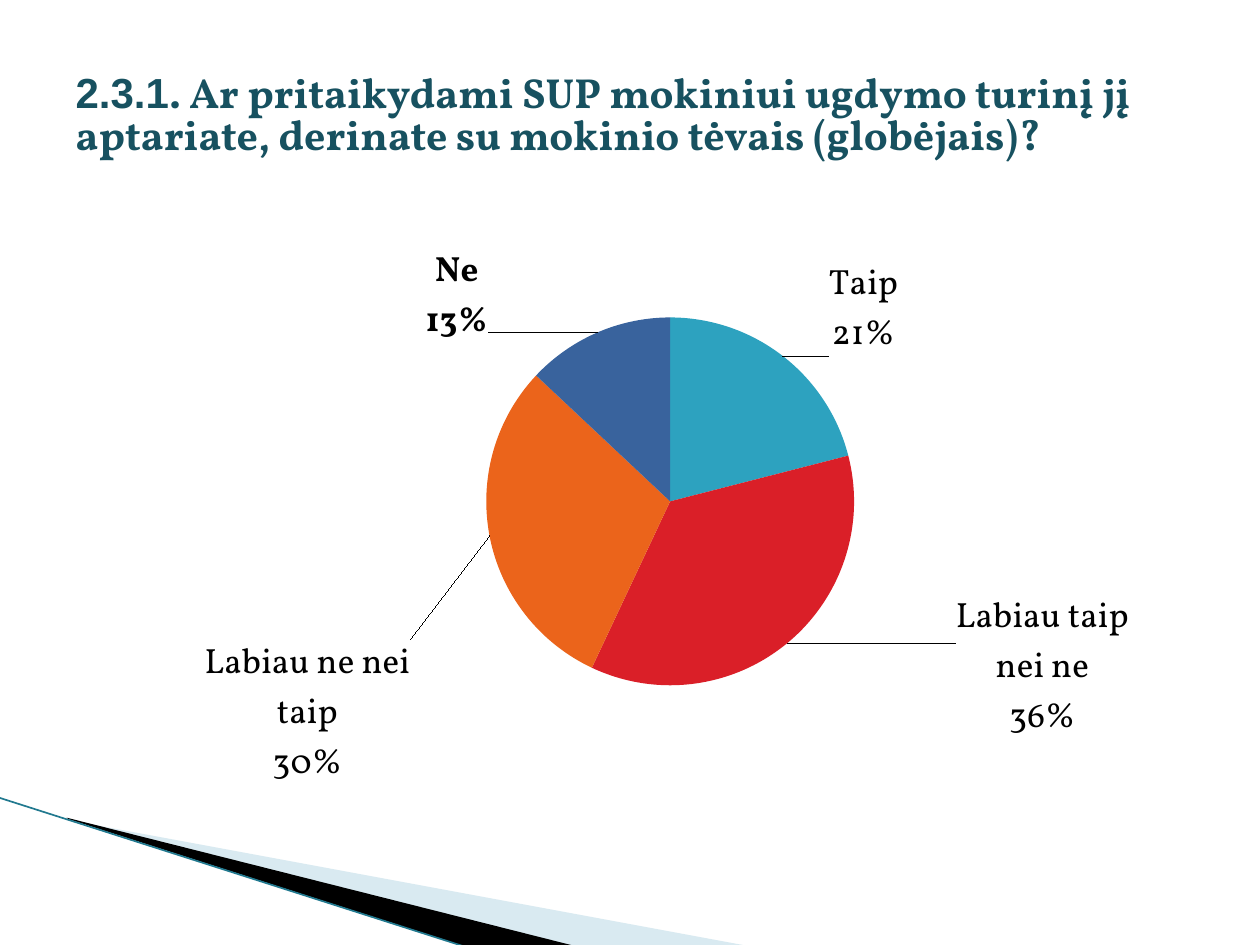
from lxml import etree
from pptx import Presentation
from pptx.chart.data import CategoryChartData
from pptx.dml.color import RGBColor
from pptx.enum.chart import XL_CHART_TYPE, XL_LABEL_POSITION
from pptx.enum.shapes import MSO_CONNECTOR
from pptx.enum.text import MSO_ANCHOR, PP_ALIGN
from pptx.oxml import parse_xml
from pptx.oxml.ns import nsdecls, qn
from pptx.util import Inches, Pt

PIE = XL_CHART_TYPE.PIE
OUTSIDE = XL_LABEL_POSITION.OUTSIDE_END
STRAIGHT = MSO_CONNECTOR.STRAIGHT

BLACK = RGBColor(0x00, 0x00, 0x00)
DARK_TEAL = RGBColor(0x17, 0x51, 0x60)
LINE_TEAL = RGBColor(0x21, 0x79, 0x8F)
PALE_BLUE = RGBColor(0xA0, 0xCB, 0xDC)

TITLE_RUNS = [
    ("2.3.1", "Arial"),
    (". Ar pritaikydami SUP mokiniui ugdymo turinį jį aptariate, "
     "derinate su mokinio tėvais (globėjais)?", "Vollkorn"),
]
# answer, percent, slice colour, bold label, label shift from the slice (inches)
ANSWERS = [
    ("Taip", 21, RGBColor(0x2D, 0xA2, 0xBF), False, (0.33, 0.08)),
    ("Labiau taip nei ne", 36, RGBColor(0xDA, 0x1F, 0x28), False, (1.3, -0.44)),
    ("Labiau ne nei taip", 30, RGBColor(0xEB, 0x64, 0x1B), False, (-0.57, 0.81)),
    ("Ne", 13, RGBColor(0x39, 0x63, 0x9D), True, (-0.84, 0.17)),
]
# outline, colour, opacity in percent
WEDGES = [
    ([(0.55, 6.51), (5.95, 7.51), (4.56, 7.51), (0.55, 6.5)], PALE_BLUE, 40),
    ([(0.53, 6.49), (4.57, 7.51), (3.72, 7.52), (0.54, 6.5)], BLACK, 100),
]
CHART_X, CHART_Y, CHART_W, CHART_H = 0.5, 1.62, 9, 4.95
PIE_X, PIE_Y, PIE_SIZE = 3.86, 2.52, 2.92


def set_font(font, name="Vollkorn", size=20, bold=False, color=BLACK):
    font.name = name
    font.size = Pt(size)
    font.bold = bold
    font.color.rgb = color


def manual_layout(x, y, size=None):
    """Chart layout element; x, y and size are inches within the chart."""
    parts = [("x", x / CHART_W), ("y", y / CHART_H)]
    modes = ""
    if size:
        parts += [("w", size / CHART_W), ("h", size / CHART_H)]
        modes = ('<c:layoutTarget val="inner"/><c:xMode val="edge"/>'
                 '<c:yMode val="edge"/>')
    values = "".join(f'<c:{tag} val="{v:.4f}"/>' for tag, v in parts)
    return parse_xml(f'<c:layout {nsdecls("c")}><c:manualLayout>{modes}{values}'
                     '</c:manualLayout></c:layout>')


def add_wedge(slide, points, color, opacity):
    points = [(Inches(x), Inches(y)) for x, y in points]
    builder = slide.shapes.build_freeform(*points[0])
    builder.add_line_segments(points[1:], close=True)
    sp = builder.convert_to_shape()
    sp.shadow.inherit = False
    sp.fill.solid()
    sp.fill.fore_color.rgb = color
    sp.line.fill.background()
    if opacity < 100:
        clr = sp._element.spPr.find(".//" + qn("a:srgbClr"))
        etree.SubElement(clr, qn("a:alpha"), val=str(opacity * 1000))


def add_edge_line(slide):
    line = slide.shapes.add_connector(
        STRAIGHT, Inches(-0.01), Inches(6.33), Inches(3.71), Inches(7.52))
    line.line.color.rgb = LINE_TEAL
    line.line.width = Pt(0.95)
    etree.SubElement(line._element.spPr, qn("a:effectLst"))


def add_pie(slide):
    data = CategoryChartData(number_format="General")
    data.categories = [answer[0] for answer in ANSWERS]
    data.add_series("Series 1", [answer[1] for answer in ANSWERS])
    chart = slide.shapes.add_chart(
        PIE, Inches(CHART_X), Inches(CHART_Y), Inches(CHART_W),
        Inches(CHART_H), data).chart
    chart.has_legend = False
    chart.has_title = False
    set_font(chart.font, "Courier New", 18)

    plot = chart.plots[0]
    plot.vary_by_categories = True
    area = chart._chartSpace.chart.plotArea
    for old in area.findall(qn("c:layout")):
        area.remove(old)
    area.insert(0, manual_layout(PIE_X - CHART_X, PIE_Y - CHART_Y, PIE_SIZE))

    series = plot.series[0]
    labels = series.data_labels
    labels.show_percentage = True
    labels.show_category_name = True
    labels.show_value = False
    labels.number_format = "0%"
    labels.number_format_is_linked = False
    labels.position = OUTSIDE
    set_font(labels.font)
    leader = labels._element.find(qn("c:showLeaderLines"))
    if leader is None:
        leader = etree.SubElement(labels._element, qn("c:showLeaderLines"))
    leader.set("val", "1")
    add_separator(labels._element)

    for i, (_, _, color, bold, shift) in enumerate(ANSWERS):
        point = series.points[i]
        point.format.fill.solid()
        point.format.fill.fore_color.rgb = color
        point.format.line.fill.background()
        set_font(point.data_label.font, bold=bold)
        point.data_label.position = OUTSIDE
        label = labels._element.findall(qn("c:dLbl"))[i]
        label.find(qn("c:idx")).addnext(manual_layout(*shift))
        for tag, shown in (("Val", "0"), ("CatName", "1"), ("Percent", "1")):
            label.find(qn("c:show" + tag)).set("val", shown)
        add_separator(label)


def add_separator(label):
    """Put the percentage on its own line below the answer."""
    separator = etree.Element(qn("c:separator"))
    separator.text = "\n"
    label.find(qn("c:showBubbleSize")).addnext(separator)


def fill_title(title):
    title.left, title.top = Inches(0.5), Inches(0.3)
    title.width, title.height = Inches(9), Inches(1.25)
    tf = title.text_frame
    tf.word_wrap = True
    tf.vertical_anchor = MSO_ANCHOR.MIDDLE
    p = tf.paragraphs[0]
    p.alignment = PP_ALIGN.LEFT
    p.line_spacing = 0.83
    for text, font in TITLE_RUNS:
        r = p.add_run()
        r.text = text
        set_font(r.font, font, 24, True, DARK_TEAL)


def main():
    prs = Presentation()
    prs.slide_width, prs.slide_height = Inches(10), Inches(7.5)
    slide = prs.slides.add_slide(prs.slide_layouts[5])
    for wedge in WEDGES:
        add_wedge(slide, *wedge)
    add_edge_line(slide)
    add_pie(slide)
    fill_title(slide.shapes.title)
    prs.save("out.pptx")


if __name__ == "__main__":
    main()
